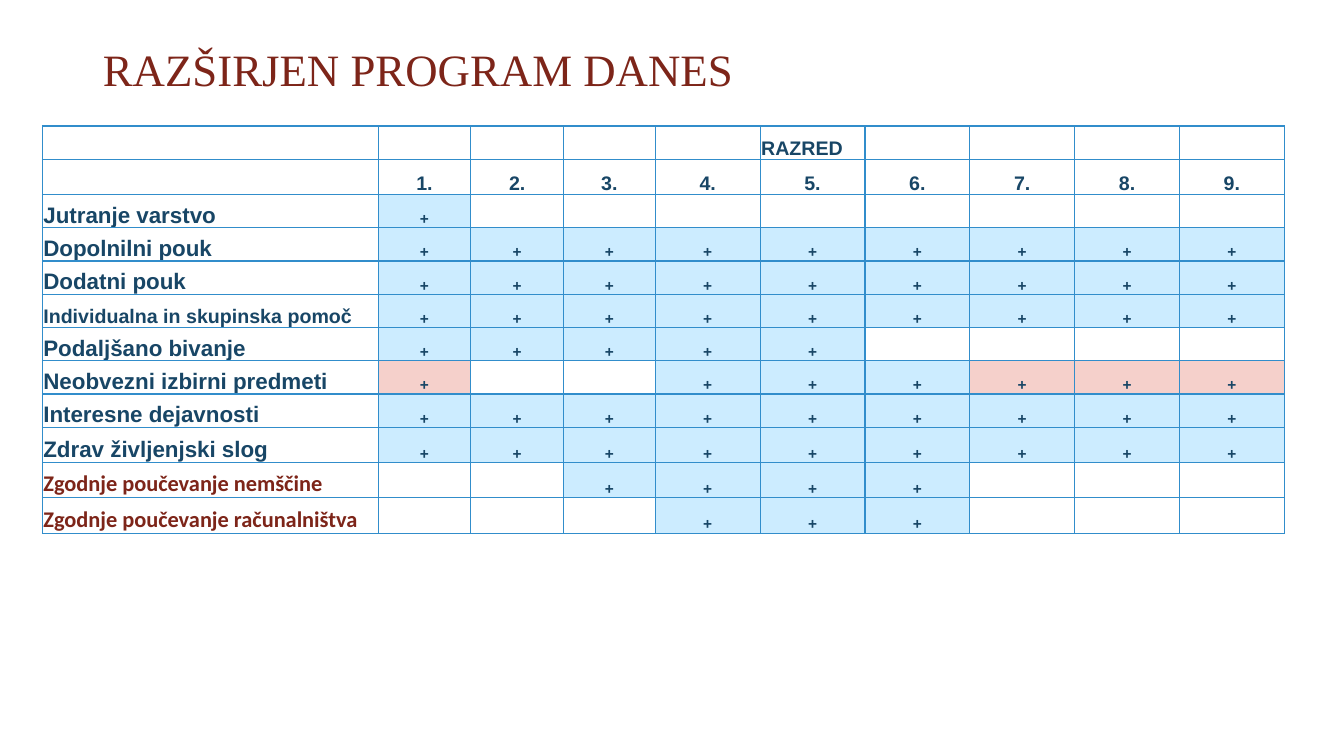
from dataclasses import dataclass

from lxml import etree
from pptx import Presentation
from pptx.dml.color import RGBColor
from pptx.enum.text import MSO_ANCHOR, MSO_AUTO_SIZE, PP_ALIGN
from pptx.oxml.ns import qn
from pptx.util import Pt

PX = 9144  # EMU per px, 100 px to the inch
BOTTOM = MSO_ANCHOR.BOTTOM
NO_AUTOFIT = MSO_AUTO_SIZE.NONE
LEFT, CENTER = PP_ALIGN.LEFT, PP_ALIGN.CENTER

COLORS = {
    "navy": "184666",
    "red": "7D2519",
    "border": "318DCB",
    "blue": "CCECFF",
    "pink": "F5D0CB",
}
MARK_FILLS = {"+": "blue", "*": "pink"}  # both marks show as a plus


@dataclass(frozen=True)
class TextStyle:
    size: int
    font: str = "Arial"
    color: str = "navy"
    bold: bool = True
    align: PP_ALIGN = LEFT


TITLE = TextStyle(32, "Times New Roman", "red", bold=False)
LABEL = TextStyle(16)
SMALL_LABEL = TextStyle(14)
EARLY_LABEL = TextStyle(16, "Calibri", "red")
GRADE = TextStyle(14, align=CENTER)
MARK = TextStyle(11, align=CENTER)


@dataclass(frozen=True)
class Activity:
    name: str
    marks: str  # one character for each grade
    style: TextStyle = LABEL


ACTIVITIES = [
    Activity("Jutranje varstvo", "+........"),
    Activity("Dopolnilni pouk", "+++++++++"),
    Activity("Dodatni pouk", "+++++++++"),
    Activity("Individualna in skupinska pomoč", "+++++++++", SMALL_LABEL),
    Activity("Podaljšano bivanje", "+++++...."),
    Activity("Neobvezni izbirni predmeti", "*..+++***"),
    Activity("Interesne dejavnosti", "+++++++++"),
    Activity("Zdrav življenjski slog", "+++++++++"),
    Activity("Zgodnje poučevanje nemščine", "..++++...", EARLY_LABEL),
    Activity("Zgodnje poučevanje računalništva", "...+++...", EARLY_LABEL),
]
COL_WIDTHS = [333, 92, 92, 91] + [104] * 6
ROW_HEIGHTS = [33, 35] + [33] * 7 + [35] * 3


def rgb(name: str) -> RGBColor:
    return RGBColor.from_string(COLORS[name])


def write(tf, text: str, style: TextStyle) -> None:
    tf.text = text
    p = tf.paragraphs[0]
    p.alignment = style.align
    font = p.runs[0].font
    font.name, font.size, font.bold = style.font, Pt(style.size), style.bold
    font.color.rgb = rgb(style.color)


def format_cell(cell) -> None:
    cell.vertical_anchor = BOTTOM
    cell.margin_left = cell.margin_right = cell.margin_top = PX
    cell.margin_bottom = 0
    tc_pr = cell._tc.get_or_add_tcPr()
    for side in ("a:lnL", "a:lnR", "a:lnT", "a:lnB"):
        ln = etree.SubElement(tc_pr, qn(side), w=str(Pt(1)))
        fill = etree.SubElement(ln, qn("a:solidFill"))
        etree.SubElement(fill, qn("a:srgbClr"), val=COLORS["border"])
    cell.fill.background()


def add_title(slide, text: str) -> None:
    sp = slide.shapes.title
    sp.left, sp.top, sp.width, sp.height = (v * PX for v in (92, 40, 1075, 60))
    tf = sp.text_frame
    tf.auto_size = NO_AUTOFIT
    tf.vertical_anchor = BOTTOM
    write(tf, text, TITLE)
    tf.paragraphs[0].line_spacing = 0.9


def add_program_table(slide) -> None:
    table = slide.shapes.add_table(
        len(ROW_HEIGHTS), len(COL_WIDTHS), 42 * PX, 125 * PX,
        sum(COL_WIDTHS) * PX, sum(ROW_HEIGHTS) * PX).table
    table.first_row = table.horz_banding = False
    for col, width in zip(table.columns, COL_WIDTHS):
        col.width = width * PX
    for row, height in zip(table.rows, ROW_HEIGHTS):
        row.height = height * PX
    for cell in table.iter_cells():
        format_cell(cell)

    # Header rows
    write(table.cell(0, 5).text_frame, "RAZRED", SMALL_LABEL)
    for grade in range(1, len(COL_WIDTHS)):
        write(table.cell(1, grade).text_frame, f"{grade}.", GRADE)

    # Activities and the grades that have them
    for r, activity in enumerate(ACTIVITIES, start=2):
        write(table.cell(r, 0).text_frame, activity.name, activity.style)
        for grade, mark in enumerate(activity.marks, start=1):
            if mark in MARK_FILLS:
                cell = table.cell(r, grade)
                write(cell.text_frame, "+", MARK)
                cell.fill.solid()
                cell.fill.fore_color.rgb = rgb(MARK_FILLS[mark])


def main() -> None:
    prs = Presentation()
    prs.slide_width, prs.slide_height = 1333 * PX, 750 * PX
    slide = prs.slides.add_slide(prs.slide_layouts[5])
    add_title(slide, "RAZŠIRJEN PROGRAM DANES")
    add_program_table(slide)
    prs.save("out.pptx")


if __name__ == "__main__":
    main()
